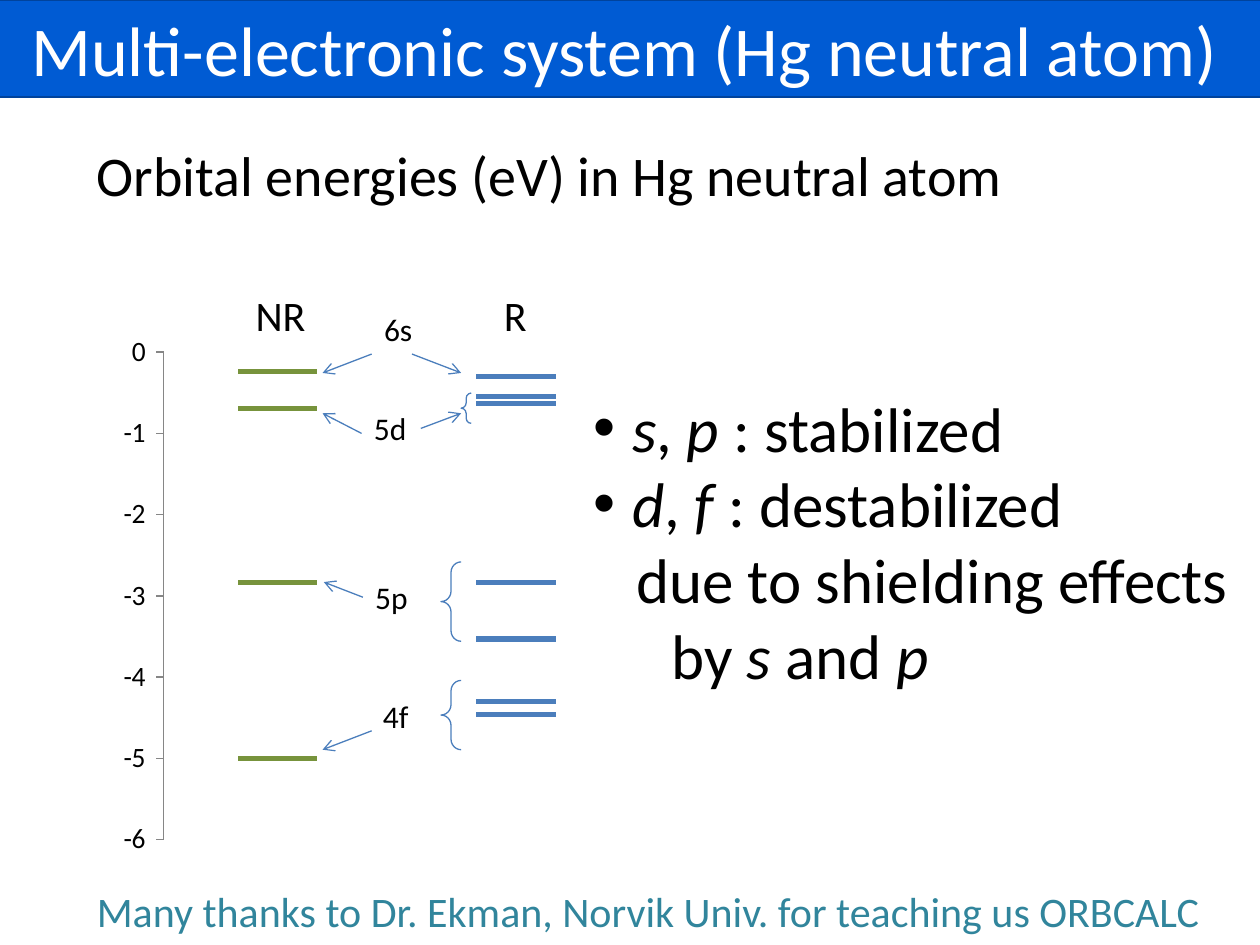
import dataclasses

import lxml.etree
import pptx
import pptx.chart.data
import pptx.dml.color
import pptx.enum.chart
import pptx.enum.shapes
import pptx.enum.text
import pptx.oxml.ns
import pptx.util

COLUMNS, ROWS = 100, 75
CELL = pptx.util.Inches(0.1)
CHART_BOX = (9.8, 26.4, 41.7, 41.8)
PLOT_SHARES = {"x": 0.056, "y": 0.037, "w": 0.899, "h": 0.926}
LOWEST_ENERGY = -6
LEVEL_WIDTH = 6.3
NR_LEFT, R_LEFT = 18.9, 37.8
NR_LEVELS = (-2.83, -5, -0.69, -0.24)
R_LEVELS = (-2.83, -3.53, -0.63, -0.55, -0.3, -4.3, -4.46)
CHART_SERIES = {
    "Series 1": (2, (-3.5, -2.8, -4.5, -4.3, -0.7, -0.6, -0.3)),
    "Series 2": (1, (-2.9, -0.3, -5, -0.7)),
}
ORBITALS = {
    "6s": (29.5, 24.1, 4.3, 4),
    "5d": (28.7, 32, 4.6, 4),
    "5p": (28.8, 45.4, 4.6, 4),
    "4f": (29.4, 54.8, 4.1, 4),
}
ARROWS = (
    (29.5, 28.1, 25.6, 29.6),
    (32.7, 28.1, 36.6, 29.6),
    (33.4, 34, 36.6, 32.8),
    (28.7, 34.4, 25.6, 32.8),
    (28.8, 47.4, 25.7, 46.2),
    (29.5, 58, 25.6, 59.5),
)
BRACES = ((35, 44.6, 1.6, 6.3), (35, 54, 1.6, 5.5), (36.6, 31.2, 0.8, 2.4))
CONCLUSIONS = (
    ((("s", True), (", ", False), ("p", True), (" : stabilized", False)), 0.31, True),
    ((("d", True), (", ", False), ("f", True), (" : destabilized", False)), 0.31, True),
    ((("due to shielding effects", False),), 0.34, False),
    ((("by ", False), ("s", True), (" and ", False), ("p", True)), 0.62, False),
)


@dataclasses.dataclass(frozen=True)
class Theme:
    """Colours, type sizes and line widths of the slide."""

    font: str = "Calibri"
    ink: str = "000000"
    paper: str = "FFFFFF"
    banner: str = "005BD3"
    banner_edge: str = "00439C"
    relativistic: str = "4B7EBC"
    nonrelativistic: str = "77933C"
    thanks: str = "31859C"
    axis: str = "868686"
    title_size: int = 40
    conclusion_size: int = 36
    heading_size: int = 32
    column_size: int = 24
    orbital_size: int = 18
    tick_size: int = 16
    level_width: float = 3
    banner_width: float = 1.25
    thin_width: float = 0.75


THEME = Theme()


def cells(*counts):
    """Turn counts of grid cells into lengths."""
    return [round(count * CELL) for count in counts]


def rgb(code):
    """Return the colour for a hex code."""
    return pptx.dml.color.RGBColor.from_string(code)


def assign(target, formats):
    """Set each format value on the target."""
    for attribute, setting in formats.items():
        setattr(target, attribute, setting)


def style_font(font, size, color=THEME.ink, italic=False):
    """Format a font in the face of the theme."""
    assign(font, {"name": THEME.font, "size": pptx.util.Pt(size), "italic": italic})
    font.color.rgb = rgb(color)


def style_line(line, color, width):
    """Give a line its colour and width."""
    line.width = pptx.util.Pt(width)
    line.fill.solid()
    line.fill.fore_color.rgb = rgb(color)


def add_child(parent, tag, **attributes):
    """Append an XML element with the given attributes."""
    return lxml.etree.SubElement(parent, pptx.oxml.ns.qn(tag), attributes)


def add_title(slide, text):
    """Fill the title placeholder as a full-width banner."""
    title = slide.shapes.title
    assign(title, dict(zip(("left", "top", "width", "height"), cells(-1.3, 0, 101.7, 7.7))))
    title.fill.solid()
    title.fill.fore_color.rgb = rgb(THEME.banner)
    style_line(title.line, THEME.banner_edge, THEME.banner_width)
    frame = title.text_frame
    assign(frame, {
        "text": text,
        "auto_size": pptx.enum.text.MSO_AUTO_SIZE.NONE,
        "vertical_anchor": pptx.enum.text.MSO_ANCHOR.MIDDLE,
    })
    frame.paragraphs[0].alignment = pptx.enum.text.PP_ALIGN.CENTER
    style_font(frame.paragraphs[0].runs[0].font, THEME.title_size, THEME.paper)


def add_text_frame(slide, box):
    """Add an unwrapped text box and return its frame."""
    frame = slide.shapes.add_textbox(*cells(*box)).text_frame
    frame.word_wrap = False
    return frame


def add_label(slide, text, box, size, color=THEME.ink):
    """Add one line of text."""
    run = add_text_frame(slide, box).paragraphs[0].add_run()
    run.text = text
    style_font(run.font, size, color)


def add_conclusions(slide):
    """Add the bulleted findings and their indented reason."""
    frame = add_text_frame(slide, (46.1, 30.4, 54.1, 25.2))
    for index, (pieces, margin, bulleted) in enumerate(CONCLUSIONS):
        paragraph = frame.add_paragraph() if index else frame.paragraphs[0]
        properties = paragraph._p.get_or_add_pPr()
        indent = pptx.util.Inches(margin)
        properties.set("marL", str(indent))
        properties.set("indent", str(-indent if bulleted else 0))
        if bulleted:
            add_child(properties, "a:buFont", typeface="Arial")
            add_child(properties, "a:buChar", char="•")
        for text, italic in pieces:
            run = paragraph.add_run()
            run.text = text
            style_font(run.font, THEME.conclusion_size, italic=italic)


def add_energy_chart(slide):
    """Add the scatter chart that carries the energy scale."""
    data = pptx.chart.data.XyChartData()
    for name, (column, energies) in CHART_SERIES.items():
        series = data.add_series(name)
        for energy in energies:
            series.add_data_point(column, energy)
    kinds = pptx.enum.chart
    chart = slide.shapes.add_chart(
        kinds.XL_CHART_TYPE.XY_SCATTER, *cells(*CHART_BOX), data).chart
    assign(chart, {"has_legend": False, "has_title": False})
    style_font(chart.font, THEME.tick_size)
    for series in chart.plots[0].series:
        series.marker.style = kinds.XL_MARKER_STYLE.NONE
    assign(chart.category_axis, {
        "visible": False, "has_major_gridlines": False, "minimum_scale": 0.5,
        "maximum_scale": 2.5, "crosses": kinds.XL_AXIS_CROSSES.MINIMUM,
    })
    scale = chart.value_axis
    assign(scale, {
        "has_major_gridlines": False, "minimum_scale": LOWEST_ENERGY, "maximum_scale": 0,
        "major_unit": 1, "major_tick_mark": kinds.XL_TICK_MARK.OUTSIDE,
    })
    assign(scale.tick_labels, {"number_format": "0_ ", "number_format_is_linked": False})
    style_font(scale.tick_labels.font, THEME.tick_size)
    style_line(scale.format.line, THEME.axis, THEME.thin_width)
    place_plot(chart)


def place_plot(chart):
    """Fix the inner plot area at its shares of the chart."""
    area = chart._chartSpace.chart.plotArea
    for old in area.findall(pptx.oxml.ns.qn("c:layout")):
        area.remove(old)
    layout = add_child(area, "c:layout")
    area.insert(0, layout)
    manual = add_child(layout, "c:manualLayout")
    add_child(manual, "c:layoutTarget", val="inner")
    for side in ("x", "y"):
        add_child(manual, f"c:{side}Mode", val="edge")
    for side, share in PLOT_SHARES.items():
        add_child(manual, f"c:{side}", val=str(share))


def add_line(slide, ends, color, width, arrow=False):
    """Add a straight line, with an arrowhead if asked."""
    kind = pptx.enum.shapes.MSO_CONNECTOR.STRAIGHT
    line = slide.shapes.add_connector(kind, *cells(*ends))
    style_line(line.line, color, width)
    if arrow:
        add_child(line.line._get_or_add_ln(), "a:tailEnd", type="arrow")
    add_child(line._element.spPr, "a:effectLst")


def add_levels(slide, left, energies, color):
    """Draw each energy as a level on the scale of the chart."""
    top, height = CHART_BOX[1], CHART_BOX[3]
    for energy in energies:
        y = top + height * (PLOT_SHARES["y"] + PLOT_SHARES["h"] * energy / LOWEST_ENERGY)
        add_line(slide, (left, y, left + LEVEL_WIDTH, y), color, THEME.level_width)


def add_brace(slide, box):
    """Add a brace around a pair of split levels."""
    brace = slide.shapes.add_shape(pptx.enum.shapes.MSO_SHAPE.LEFT_BRACE, *cells(*box))
    brace.shadow.inherit = False
    brace.adjustments[0] = 0.52
    brace.fill.background()
    style_line(brace.line, THEME.relativistic, THEME.thin_width)


def main():
    """Build the slide and save it."""
    deck = pptx.Presentation()
    assign(deck, {"slide_width": COLUMNS * CELL, "slide_height": ROWS * CELL})
    slide = deck.slides.add_slide(deck.slide_layouts[5])
    add_title(slide, "Multi-electronic system (Hg neutral atom)")
    add_energy_chart(slide)
    add_levels(slide, R_LEFT, R_LEVELS, THEME.relativistic)
    add_levels(slide, NR_LEFT, NR_LEVELS, THEME.nonrelativistic)
    add_label(slide, "Orbital energies (eV) in Hg neutral atom",
              (6.7, 10.7, 75.7, 6.4), THEME.heading_size)
    for orbital, box in ORBITALS.items():
        add_label(slide, orbital, box, THEME.orbital_size)
    for ends in ARROWS:
        add_line(slide, ends, THEME.relativistic, THEME.thin_width, arrow=True)
    for box in BRACES:
        add_brace(slide, box)
    add_label(slide, "NR", (19.3, 22.5, 6, 5), THEME.column_size)
    add_label(slide, "R", (39, 22.5, 3.8, 5), THEME.column_size)
    add_conclusions(slide)
    add_label(slide, "Many thanks to Dr. Ekman, Norvik Univ. for teaching us ORBCALC",
              (6.7, 69.8, 90.9, 5), THEME.column_size, THEME.thanks)
    deck.save("out.pptx")


if __name__ == "__main__":
    main()
